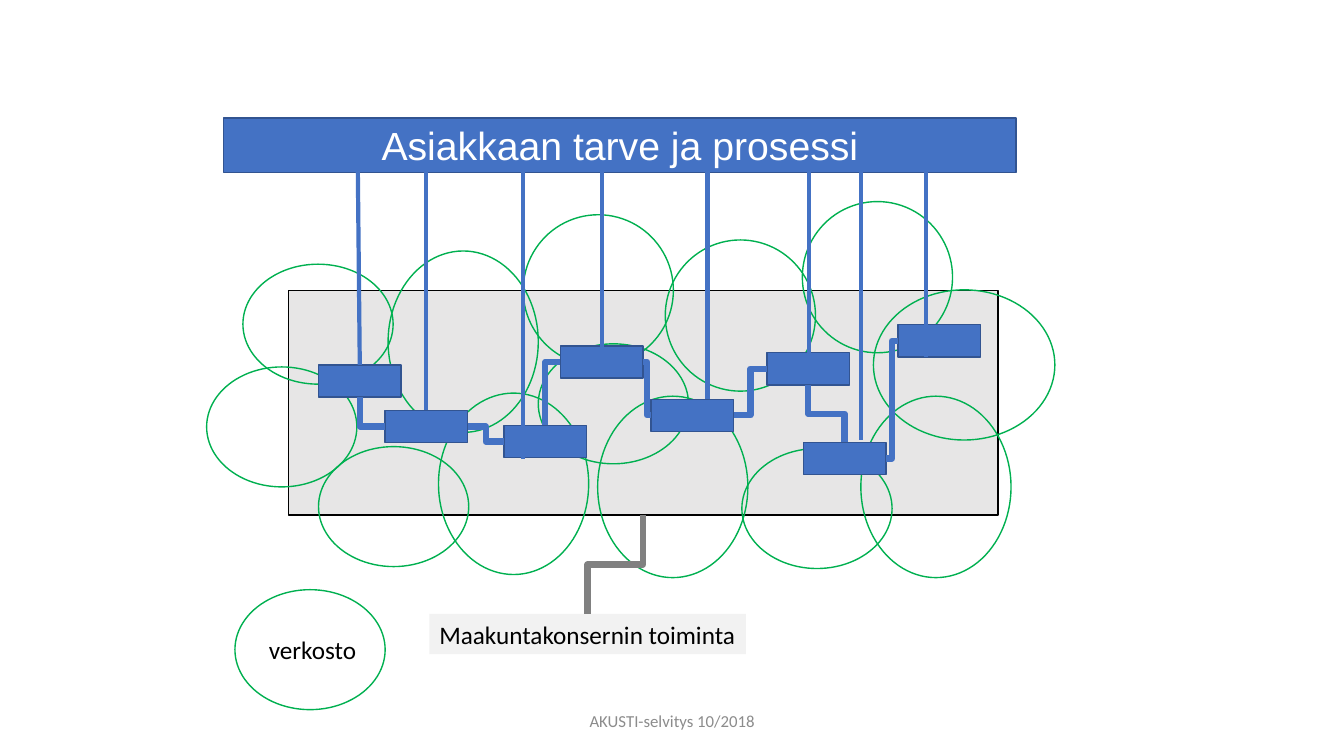
from dataclasses import dataclass
from typing import NamedTuple

from lxml import etree
from pptx import Presentation
from pptx.dml.color import RGBColor
from pptx.enum import shapes, text
from pptx.oxml.ns import qn
from pptx.util import Pt


@dataclass(frozen=True)
class Theme:
    blue: str = "4472C4"
    blue_edge: str = "325491"
    green: str = "00B050"
    frame: str = "E7E6E6"
    label: str = "F2F2F2"
    grey: str = "808080"
    footer: str = "8C8C8C"
    black: str = "000000"
    white: str = "FFFFFF"
    heading_font: str = "Arial"
    body_font: str = "Calibri"
    heading_size: int = 28
    body_size: int = 18
    footer_size: int = 12
    thin: float = 1
    medium: float = 3
    thick: float = 4.5


THEME = Theme()


class Box(NamedTuple):
    left: float
    top: float
    width: float
    height: float

    def inner(self, left, top, width, height):
        return Box(self.left + left, self.top + top, width, height)

    def anchor(self, side):
        across, down = {"left": (0, 0.5), "right": (1, 0.5),
                        "top": (0.5, 0), "bottom": (0.5, 1)}[side]
        return self.left + across * self.width, self.top + down * self.height


RECTANGLE = shapes.MSO_SHAPE.RECTANGLE
OVAL = shapes.MSO_SHAPE.OVAL
NETWORK_SIZES = {"wide": (107.3, 85.7), "tall": (107.3, 129.6),
                 "round": (107.3, 108), "broad": (129.6, 107.3)}
NETWORKS = [
    ("wide", 21.6, 111.6), ("wide", -32.4, -18.7), ("wide", -58.3, 54.7),
    ("tall", 71.3, -28.1), ("tall", 107.3, 73.4), ("tall", 221, 75.6),
    ("wide", 178.6, 38.2), ("round", 167.8, -54), ("round", 269.3, -36),
    ("round", 367.2, -63.4), ("wide", 324, 113), ("tall", 409, 75.6),
    ("broad", 418, -0.4),
]
STEPS = [(21.6, 53.3), (69.1, 85.7), (154.1, 96.5), (194.4, 39.6),
         (259.2, 77.8), (342, 44.6), (367.9, 108.7), (435.6, 24.5)]
STEP_SIZE = (59, 23)
STEP_LINKS = [("bottom", "left"), ("right", "left"), ("top", "left"),
              ("right", "left"), ("right", "left"), ("bottom", "top"),
              ("right", "left")]
DROPS = [(95.8, 97.2, 138.2), (144.7, 144.7, 170.6), (213.8, 213.8, 205.2),
         (270, 270, 144), (345.6, 345.6, 162.7), (418.3, 418.3, 150.5),
         (455, 455, 192.2), (501.8, 501.8, 132.5)]


def colour(value):
    return RGBColor.from_string(value)


def add_block(slide, box, kind=RECTANGLE, fill=None, line=None):
    shape = slide.shapes.add_shape(kind, *map(Pt, box))
    shape.shadow.inherit = False
    if fill:
        shape.fill.solid()
        shape.fill.fore_color.rgb = colour(fill)
    else:
        shape.fill.background()
    if line:
        shape.line.color.rgb = colour(line)
        shape.line.width = Pt(THEME.thin)
    else:
        shape.line.fill.background()
    return shape


def write(shape, words, font=THEME.body_font, size=THEME.body_size,
          color=THEME.black, align=text.PP_ALIGN.CENTER,
          anchor=text.MSO_ANCHOR.MIDDLE):
    frame = shape.text_frame
    frame.word_wrap = True
    frame.vertical_anchor = anchor
    paragraph = frame.paragraphs[0]
    paragraph.alignment = align
    run = paragraph.add_run()
    run.text = words
    run.font.name = font
    run.font.size = Pt(size)
    run.font.color.rgb = colour(color)


def add_line(slide, start, end, color, width,
             kind=shapes.MSO_CONNECTOR.STRAIGHT):
    connector = slide.shapes.add_connector(kind, *map(Pt, (*start, *end)))
    connector.line.color.rgb = colour(color)
    connector.line.width = Pt(width)
    etree.SubElement(connector.element.spPr, qn("a:effectLst"))
    return connector


def add_elbow(slide, source, target, sides, color):
    start, end = source.anchor(sides[0]), target.anchor(sides[1])
    vertical = sides[0] in ("top", "bottom")
    across, down = end[0] - start[0], end[1] - start[1]
    turn = 1 if across > 0 else -1
    if vertical:
        middle_x, middle_y = start[0] + across / 2, start[1] + down / 2
        half_x, half_y = turn * down / 2, turn * across / 2
        start = middle_x + half_x, middle_y - half_y
        end = middle_x - half_x, middle_y + half_y
    connector = add_line(slide, start, end, color, THEME.thick,
                         shapes.MSO_CONNECTOR.ELBOW)
    if vertical:
        connector.rotation = 270 if turn > 0 else 90
    if vertical and sides[1] == "left":
        geometry = connector.element.spPr.find(qn("a:prstGeom"))
        geometry.set("prst", "bentConnector2")


def add_operations(slide, box):
    add_block(slide, box, fill=THEME.frame, line=THEME.black)
    for size, left, top in NETWORKS:
        add_block(slide, box.inner(left, top, *NETWORK_SIZES[size]), OVAL,
                  line=THEME.green)
    steps = [box.inner(left, top, *STEP_SIZE) for left, top in STEPS]
    for step in steps:
        add_block(slide, step, fill=THEME.blue, line=THEME.blue_edge)
    for source, target, sides in zip(steps, steps[1:], STEP_LINKS):
        add_elbow(slide, source, target, sides, THEME.blue)


def add_customer_need(slide, box):
    banner = add_block(slide, box, fill=THEME.blue, line=THEME.blue_edge)
    write(banner, "Asiakkaan tarve ja prosessi", font=THEME.heading_font,
          size=THEME.heading_size, color=THEME.white)
    bottom = box.top + box.height - 0.7
    for start, end, length in DROPS:
        add_line(slide, (box.left + start, bottom),
                 (box.left + end, bottom + length), THEME.blue, THEME.medium)


def add_operations_label(slide, box, operations):
    label = add_block(slide, box, fill=THEME.label)
    write(label, "Maakuntakonsernin toiminta", align=text.PP_ALIGN.LEFT,
          anchor=text.MSO_ANCHOR.TOP)
    add_elbow(slide, operations, box, ("bottom", "top"), THEME.grey)


def add_network_legend(slide, box):
    caption = slide.shapes.add_textbox(
        *map(Pt, box.inner(9.3, 28.1, 92.2, 28.8)))
    write(caption, "verkosto", anchor=text.MSO_ANCHOR.TOP)
    add_block(slide, box, OVAL, line=THEME.green)


def add_footer(slide, box):
    footer = slide.shapes.add_textbox(*map(Pt, box))
    write(footer, "AKUSTI-selvitys 10/2018", size=THEME.footer_size,
          color=THEME.footer)


def main():
    presentation = Presentation()
    presentation.slide_width = Pt(960)
    presentation.slide_height = Pt(540)
    slide = presentation.slides.add_slide(presentation.slide_layouts[6])
    operations = Box(205.9, 207.4, 506.9, 160.6)
    add_operations(slide, operations)
    add_customer_need(slide, Box(159.8, 84.2, 565.9, 38.9))
    add_operations_label(slide, Box(306.7, 438.5, 226.1, 28.8), operations)
    add_network_legend(slide, Box(167.8, 421.2, 107.3, 85.7))
    add_footer(slide, Box(318.2, 500.4, 324, 28.8))
    presentation.save("out.pptx")


if __name__ == "__main__":
    main()
